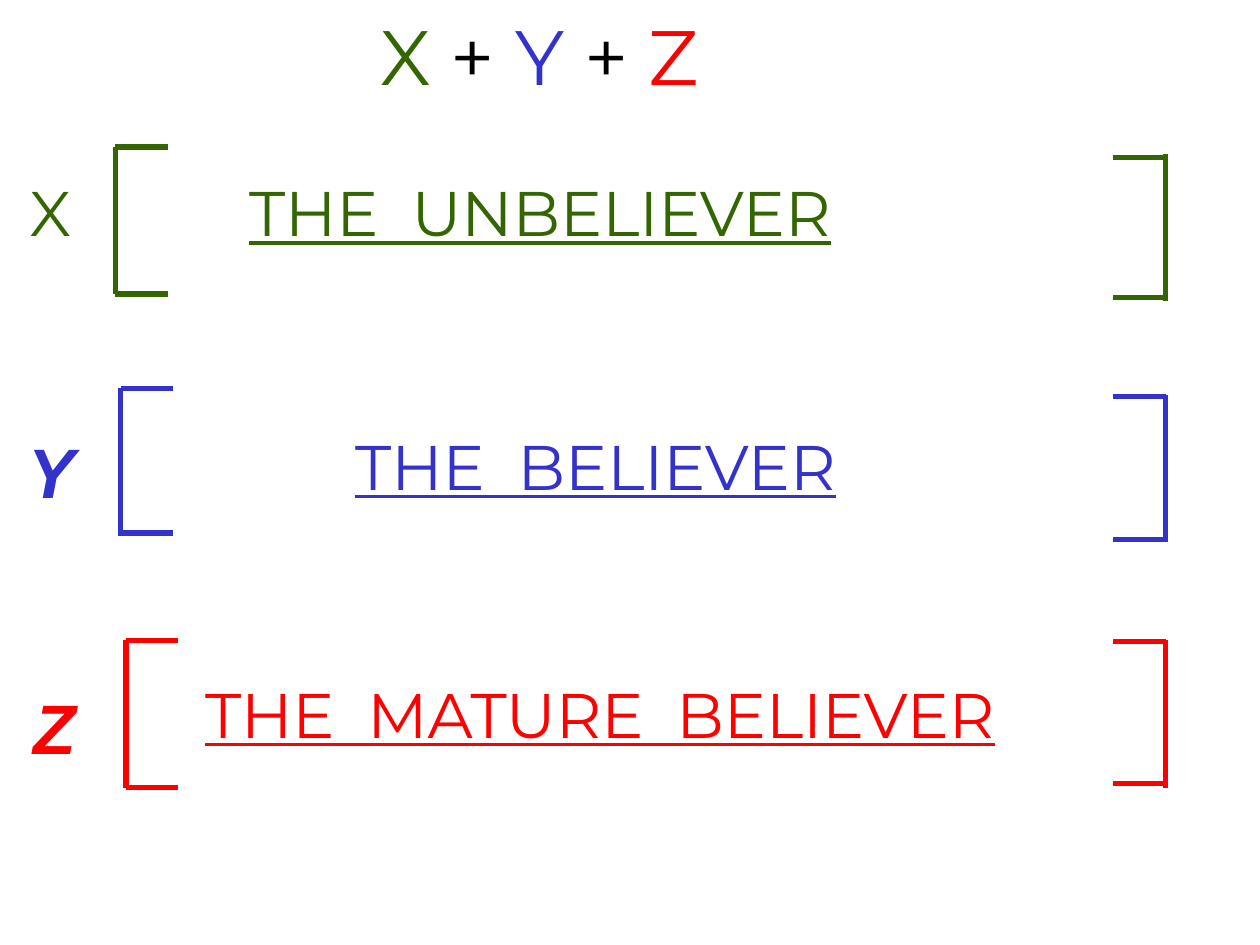
from dataclasses import dataclass

from pptx import Presentation
from pptx.dml.color import RGBColor
from pptx.enum.shapes import MSO_CONNECTOR
from pptx.enum.text import MSO_ANCHOR, MSO_AUTO_SIZE, PP_ALIGN
from pptx.oxml.ns import qn
from pptx.util import Inches, Pt

STRAIGHT = MSO_CONNECTOR.STRAIGHT
TOP = MSO_ANCHOR.TOP
NO_AUTOSIZE = MSO_AUTO_SIZE.NONE
LEFT = PP_ALIGN.LEFT
TITLE_ONLY = 5
COLUMNS, ROWS = 24, 18
WIDTH, HEIGHT = Inches(10), Inches(7.5)
SPINE_ROWS = 2.8


@dataclass(frozen=True)
class Theme:
    """Colours, fonts and sizes used on the slide."""
    green: RGBColor = RGBColor(0x33, 0x66, 0x00)
    blue: RGBColor = RGBColor(0x33, 0x33, 0xCC)
    red: RGBColor = RGBColor(0xFF, 0x00, 0x00)
    black: RGBColor = RGBColor(0x00, 0x00, 0x00)
    main_font: str = "Montserrat"
    label_font: str = "Arial"
    title_size: int = 44
    label_size: int = 40
    heading_size: int = 36
    line_width: int = 3


THEME = Theme()


@dataclass(frozen=True)
class Band:
    """One bracketed row; offsets are measured from its left bracket's top."""
    letter: str
    heading: str
    color: RGBColor
    top: float
    left: float
    right_offset: float
    left_arms: tuple
    right_arms: tuple
    label_at: tuple
    heading_at: tuple
    heading_columns: float
    slanted: bool = True


BANDS = (
    Band("X", "THE  UNBELIEVER", THEME.green, 2.8, 2.2, 0.13, (0, 2.8),
         (0.07, 2.73), (0.33, 0.39), (4.51, 0.39), 12, slanted=False),
    Band("Y", "THE  BELIEVER", THEME.blue, 7.4, 2.3, 0.12, (0, 2.75),
         (0.03, 2.75), (0.31, 0.64), (6.53, 0.62), 10.68),
    Band("Z", "THE  MATURE  BELIEVER", THEME.red, 12.2, 2.4, 0, (0, 2.8),
         (0.02, 2.73), (0.41, 0.72), (3.67, 0.54), 17.2),
)


def across(columns):
    """Convert grid columns to a length."""
    return int(WIDTH * columns / COLUMNS)


def down(rows):
    """Convert grid rows to a length."""
    return int(HEIGHT * rows / ROWS)


def style_run(run, color, size, font=THEME.main_font):
    """Give a run its typeface, size and colour."""
    run.font.name = font
    run.font.size = Pt(size)
    run.font.color.rgb = color


def add_title(slide, left, top, columns, rows):
    """Place the title and colour each letter to match its band."""
    title = slide.shapes.title
    title.left, title.top = across(left), down(top)
    title.width, title.height = across(columns), down(rows)
    frame = title.text_frame
    frame.auto_size = NO_AUTOSIZE
    frame.vertical_anchor = TOP
    paragraph = frame.paragraphs[0]
    paragraph.alignment = LEFT
    for index, band in enumerate(BANDS):
        if index:
            plus = paragraph.add_run()
            plus.text = " + "
            style_run(plus, THEME.black, THEME.title_size)
        letter = paragraph.add_run()
        letter.text = band.letter
        style_run(letter, band.color, THEME.title_size)


def add_text(slide, text, left, top, columns, color, size, font=THEME.main_font):
    """Add a one-line text box and return its run."""
    box = slide.shapes.add_textbox(across(left), down(top), across(columns), down(1.7))
    box.text_frame.text = text
    box.text_frame.word_wrap = False
    run = box.text_frame.paragraphs[0].runs[0]
    style_run(run, color, size, font)
    return run


def add_line(slide, start, end, color):
    """Draw a straight line between two grid points."""
    line = slide.shapes.add_connector(
        STRAIGHT, across(start[0]), down(start[1]), across(end[0]), down(end[1]))
    line.line.color.rgb = color
    line.line.width = Pt(THEME.line_width)
    properties = line._element.spPr
    properties.append(properties.makeelement(qn("a:effectLst"), {}))


def add_bracket(slide, spine, tip, top, arms, color):
    """Draw a square bracket from a spine and two arms."""
    add_line(slide, (spine, top), (spine, top + SPINE_ROWS), color)
    for arm in arms:
        add_line(slide, (spine, top + arm), (tip, top + arm), color)


def add_band(slide, band, right):
    """Place a band's brackets, letter and heading."""
    add_bracket(slide, band.left, band.left + 1, band.top, band.left_arms, band.color)
    add_bracket(slide, right, right - 1, band.top + band.right_offset,
                band.right_arms, band.color)
    font = THEME.label_font if band.slanted else THEME.main_font
    size = THEME.label_size if band.slanted else THEME.heading_size
    column, row = band.label_at
    label = add_text(slide, band.letter, column, band.top + row, 1.8,
                     band.color, size, font)
    label.font.bold = label.font.italic = band.slanted
    column, row = band.heading_at
    heading = add_text(slide, band.heading, column, band.top + row,
                       band.heading_columns, band.color, THEME.heading_size)
    heading.font.underline = True


def main():
    """Build and save the presentation."""
    presentation = Presentation()
    presentation.slide_width, presentation.slide_height = WIDTH, HEIGHT
    slide = presentation.slides.add_slide(presentation.slide_layouts[TITLE_ONLY])
    add_title(slide, left=7, top=0.05, columns=12.4, rows=2)
    for band in BANDS:
        add_band(slide, band, right=22.2)
    presentation.save("out.pptx")


if __name__ == "__main__":
    main()
